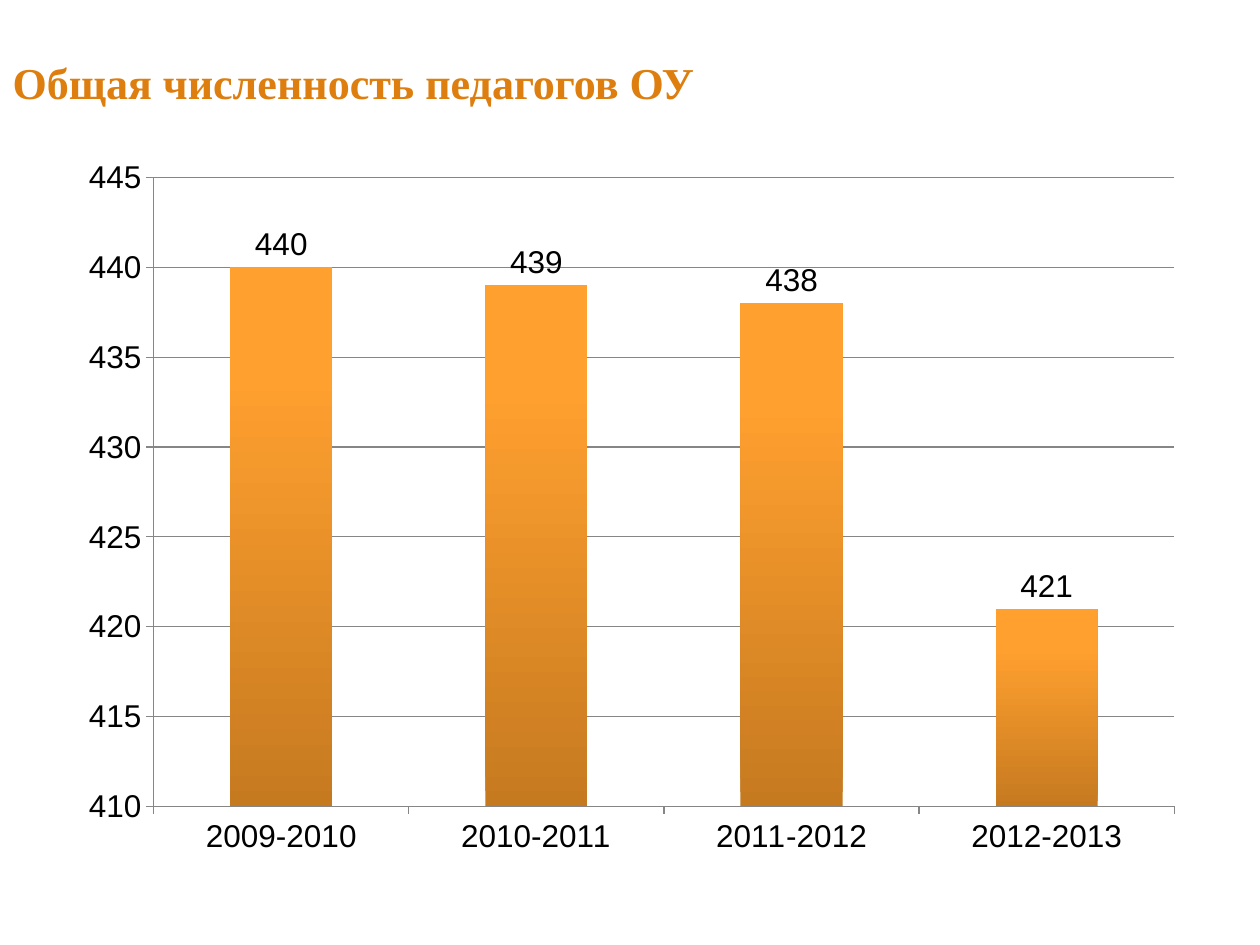
from lxml import etree
from pptx import Presentation
from pptx.chart.data import CategoryChartData
from pptx.dml.color import RGBColor
from pptx.enum.chart import XL_CHART_TYPE as ChartType
from pptx.enum.chart import XL_LABEL_POSITION as LabelPosition
from pptx.enum.chart import XL_TICK_MARK as TickMark
from pptx.enum.text import MSO_ANCHOR, MSO_AUTO_SIZE, PP_ALIGN
from pptx.oxml import parse_xml
from pptx.oxml.ns import nsdecls, qn
from pptx.util import Pt


def color(hex_string):
    return RGBColor.from_string(hex_string)


presentation = Presentation()
presentation.slide_width = Pt(720)
presentation.slide_height = Pt(540)
slide = presentation.slides.add_slide(presentation.slide_layouts[5])

# Title
title = slide.shapes.title
title.left, title.top, title.width, title.height = Pt(0), Pt(39.6), Pt(686), Pt(44.6)
text_frame = title.text_frame
text_frame.text = "Общая численность педагогов ОУ \v"
text_frame.word_wrap = True
text_frame.auto_size = MSO_AUTO_SIZE.NONE
text_frame.vertical_anchor = MSO_ANCHOR.MIDDLE
paragraph = text_frame.paragraphs[0]
paragraph.alignment = PP_ALIGN.LEFT
paragraph.font.size = Pt(25.2)
for run in paragraph.runs:
    run.font.size = Pt(25.2)
    run.font.bold = True
    run.font.name = "Times New Roman"
    run.font.color.rgb = color("DD7E0E")
    shadow = parse_xml(
        f'<a:effectLst {nsdecls("a")}>'
        '<a:outerShdw blurRad="38100" dist="38100" dir="2700000" algn="tl">'
        '<a:srgbClr val="000000"><a:alpha val="43000"/></a:srgbClr>'
        '</a:outerShdw></a:effectLst>')
    run.font._element.find(qn("a:solidFill")).addnext(shadow)

# Chart
chart_data = CategoryChartData()
chart_data.categories = ["2009-2010", "2010-2011", "2011-2012", "2012-2013"]
chart_data.add_series("Series 1", [440, 439, 438, 421])
chart = slide.shapes.add_chart(
    ChartType.COLUMN_CLUSTERED, Pt(36), Pt(85), Pt(648), Pt(413), chart_data).chart
chart.has_title = False
chart.has_legend = False
chart.font.name = "Arial"
chart.font.size = Pt(18)
chart.font.color.rgb = color("000000")

# Fixed inner plot area, as fractions of the chart
plot_area = chart._chartSpace.chart.plotArea
for layout in plot_area.findall(qn("c:layout")):
    plot_area.remove(layout)
layout = etree.Element(qn("c:layout"))
manual = etree.SubElement(layout, qn("c:manualLayout"))
for tag, value in [("layoutTarget", "inner"), ("xMode", "edge"), ("yMode", "edge"),
                   ("x", "0.08"), ("y", "0.04"), ("w", "0.9"), ("h", "0.87")]:
    etree.SubElement(manual, qn(f"c:{tag}")).set("val", value)
plot_area.insert(0, layout)

for axis in (chart.category_axis, chart.value_axis):
    axis.major_tick_mark = TickMark.OUTSIDE
    axis.minor_tick_mark = TickMark.NONE
    axis.format.line.color.rgb = color("868686")
    axis.format.line.width = Pt(0.75)
value_axis = chart.value_axis
value_axis.minimum_scale = 410
value_axis.maximum_scale = 445
value_axis.major_unit = 5
value_axis.has_major_gridlines = True
value_axis.major_gridlines.format.line.color.rgb = color("868686")
value_axis.major_gridlines.format.line.width = Pt(0.75)

plot = chart.plots[0]
plot.vary_by_categories = False
plot.gap_width = 150
plot.has_data_labels = True
plot.data_labels.show_value = True
plot.data_labels.position = LabelPosition.OUTSIDE_END

# Columns run from dark at the foot to plain orange near the top
fill = plot.series[0].format.fill
fill.gradient()
fill.gradient_angle = 90
for stop, position, hex_string in zip(fill.gradient_stops, (0, 0.8), ("C67A20", "FFA02F")):
    stop.position = position
    stop.color.rgb = color(hex_string)

presentation.save("out.pptx")
